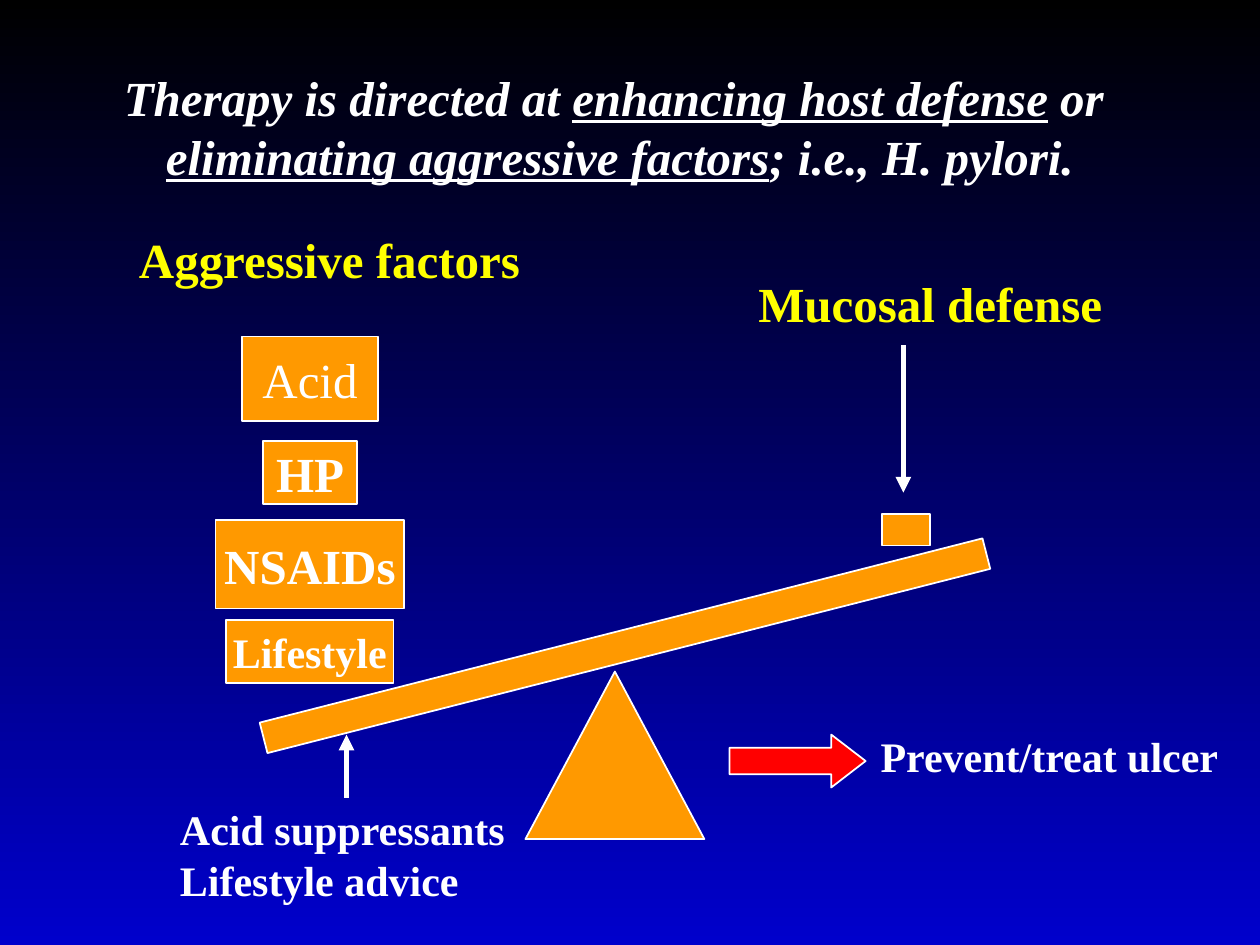
"""Build a slide that shows ulcer therapy as a seesaw of aggressive factors and mucosal defense."""
import pptx
import pptx.dml.color
import pptx.enum.shapes
import pptx.enum.text
import pptx.oxml
import pptx.oxml.ns
import pptx.util

Inches = pptx.util.Inches
Shape = pptx.enum.shapes.MSO_SHAPE
Align = pptx.enum.text.PP_ALIGN
Anchor = pptx.enum.text.MSO_ANCHOR

THEME = {
    "font": "Times New Roman", "large": 28, "small": 24, "outline": 1, "arrow": 3,
    "white": "FFFFFF", "yellow": "FFFF00", "orange": "FF9900", "red": "FF0000",
    "top": "000000", "bottom": "0000CC",
}

TITLE_AREA = (0.67, 0.58, 8.5, 1.25)
TITLE = [
    ("Therapy is directed at ", False), ("enhancing host defense", True), (" or \v", False),
    ("eliminating aggressive factors", True), ("; i.e., H. pylori.", False),
]
LABELS = [
    (["Mucosal defense"], (5.92, 2.12, 2.93, 0.57), "large", "yellow", Align.LEFT),
    (["Aggressive factors"], (1, 1.77, 3.23, 0.57), "large", "yellow", Align.CENTER),
    (["Acid suppressants", "Lifestyle advice"], (1.33, 6.33, 2.79, 0.9), "small", "white", Align.LEFT),
    (["Prevent/treat ulcer"], (6.89, 5.75, 2.89, 0.5), "small", "white", Align.LEFT),
]
STACK_CENTER = 2.46
STACK = [
    ("Acid", 2.67, 1.08, 0.67, "large", False),
    ("HP", 3.5, 0.75, 0.5, "large", True),
    ("NSAIDs", 4.13, 1.5, 0.7, "large", True),
    ("Lifestyle", 4.92, 1.33, 0.5, "small", True),
]
BEAM, BEAM_ANGLE = (2, 5, 5.92, 0.25), -14.3
DEFENSE_WEIGHT = (7, 4.08, 0.38, 0.25)
PIVOT = (4.17, 5.33, 1.42, 1.33)
OUTCOME_ARROW = (5.79, 5.83, 1.08, 0.42)
ARROWS = [(2.75, 6.33, 5.83), (7.17, 2.74, 3.91)]


def color(name):
    return pptx.dml.color.RGBColor.from_string(THEME[name])


def lengths(area):
    return [Inches(value) for value in area]


def add_span(para, text, size, tint="white", **formats):
    span = para.add_run()
    span.text = text
    span.font.color.rgb = color(tint)
    values = {"name": THEME["font"], "size": pptx.util.Pt(THEME[size]), "bold": True, **formats}
    for name, value in values.items():
        setattr(span.font, name, value)


def add_block(page, kind, area, fill="orange"):
    block = page.shapes.add_shape(kind, *lengths(area))
    block.shadow.inherit = False
    block.fill.solid()
    block.fill.fore_color.rgb = color(fill)
    block.line.color.rgb = color("white")
    block.line.width = pptx.util.Pt(THEME["outline"])
    return block


def add_background(page):
    fill = page.background.fill
    fill.gradient()
    fill.gradient_angle = 270
    for stop, position, name in zip(fill.gradient_stops, (0, 1), ("top", "bottom")):
        stop.position = position
        stop.color.rgb = color(name)


def add_title(page):
    title = page.shapes.title
    for name, value in zip(("left", "top", "width", "height"), lengths(TITLE_AREA)):
        setattr(title, name, value)
    frame = title.text_frame
    formats = {"word_wrap": True, "vertical_anchor": Anchor.MIDDLE, "margin_bottom": Inches(0.46),
               "auto_size": pptx.enum.text.MSO_AUTO_SIZE.NONE}
    for name, value in formats.items():
        setattr(frame, name, value)
    para = frame.paragraphs[0]
    para.alignment = Align.CENTER
    for text, underline in TITLE:
        pieces = text.split("\v")
        add_span(para, pieces[0], "large", italic=True, underline=underline)
        if len(pieces) > 1:
            para.add_line_break()


def add_label(page, lines, area, size, tint, alignment):
    frame = page.shapes.add_textbox(*lengths(area)).text_frame
    frame.word_wrap = alignment == Align.CENTER
    for index, line in enumerate(lines):
        para = frame.add_paragraph() if index else frame.paragraphs[0]
        para.alignment = alignment
        add_span(para, line, size, tint)


def add_factor(page, text, top, width, height, size, bold):
    block = add_block(page, Shape.RECTANGLE, (STACK_CENTER - width / 2, top, width, height))
    frame = block.text_frame
    frame.word_wrap = False
    frame.vertical_anchor = Anchor.MIDDLE
    para = frame.paragraphs[0]
    para.alignment = Align.CENTER
    add_span(para, text, size, bold=bold)


def add_arrow(page, x, start, end):
    arrow = page.shapes.add_connector(
        pptx.enum.shapes.MSO_CONNECTOR.STRAIGHT, *lengths((x, start, x, end)))
    arrow.line.color.rgb = color("white")
    arrow.line.width = pptx.util.Pt(THEME["arrow"])
    namespace = pptx.oxml.ns.nsdecls("a")
    arrow.line._get_or_add_ln().append(
        pptx.oxml.parse_xml(f'<a:tailEnd {namespace} type="triangle"/>'))
    arrow._element.spPr.append(pptx.oxml.parse_xml(f"<a:effectLst {namespace}/>"))


def main():
    deck = pptx.Presentation()
    deck.slide_width, deck.slide_height = lengths((10, 7.5))
    page = deck.slides.add_slide(deck.slide_layouts[5])
    add_background(page)
    add_title(page)
    add_block(page, Shape.RECTANGLE, BEAM).rotation = BEAM_ANGLE
    add_block(page, Shape.RECTANGLE, DEFENSE_WEIGHT)
    add_block(page, Shape.ISOSCELES_TRIANGLE, PIVOT)
    for factor in STACK:
        add_factor(page, *factor)
    for label in LABELS:
        add_label(page, *label)
    for arrow in ARROWS:
        add_arrow(page, *arrow)
    add_block(page, Shape.RIGHT_ARROW, OUTCOME_ARROW, "red").adjustments[1] = 0.65
    deck.save("out.pptx")


if __name__ == "__main__":
    main()
